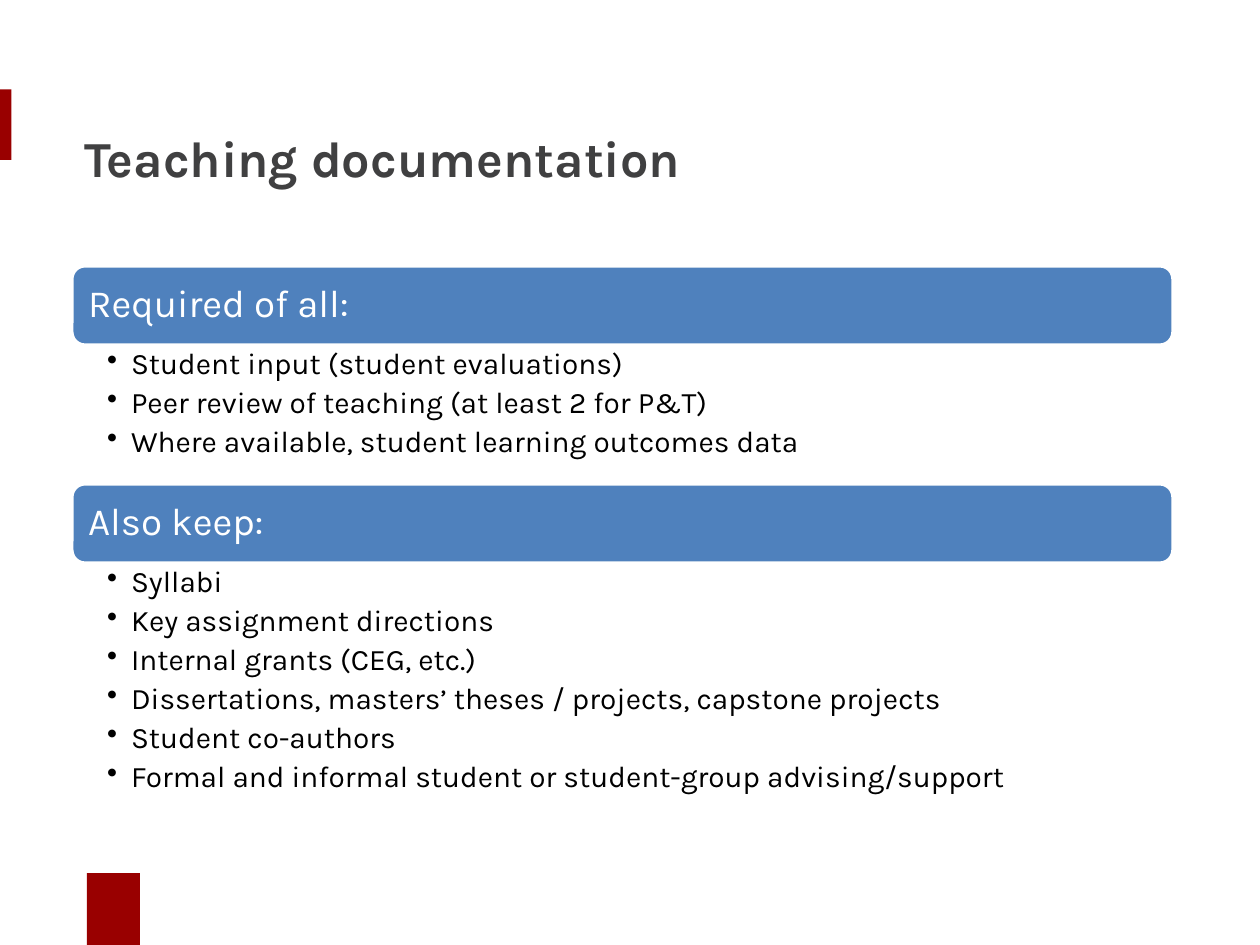
from lxml import etree
from pptx import Presentation
from pptx.dml.color import RGBColor
from pptx.enum.shapes import MSO_SHAPE
from pptx.enum.text import MSO_ANCHOR, PP_ALIGN
from pptx.oxml.ns import qn
from pptx.util import Inches, Pt

RECTANGLE = MSO_SHAPE.RECTANGLE
ROUNDED = MSO_SHAPE.ROUNDED_RECTANGLE
TOP, MIDDLE = MSO_ANCHOR.TOP, MSO_ANCHOR.MIDDLE
LEFT_ALIGNED = PP_ALIGN.LEFT

FONT = "Karla"
RED = RGBColor(0x99, 0x00, 0x00)
BLUE = RGBColor(0x4F, 0x81, 0xBD)
GRAY = RGBColor(0x40, 0x40, 0x41)
WHITE = RGBColor(0xFF, 0xFF, 0xFF)
BLACK = RGBColor(0x00, 0x00, 0x00)

SLIDE_WIDTH, SLIDE_HEIGHT = 10, 7.5
LEFT, CONTENT_WIDTH = 0.57, 8.74
CONTENT_TOP, BAR_HEIGHT = 2.11, 0.63
BULLET_INDENT = 0.19

SECTIONS = [
    ("Required of all:", 1.1, [
        "Student input (student evaluations)",
        "Peer review of teaching (at least 2 for P&T)",
        "Where available, student learning outcomes data",
    ]),
    ("Also keep:", 2.19, [
        "Syllabi",
        "Key assignment directions",
        "Internal grants (CEG, etc.)",
        "Dissertations, masters’ theses / projects, capstone projects",
        "Student co-authors",
        "Formal and informal student or student-group advising/support",
    ]),
]


def add_bullet(paragraph):
    """Give a paragraph a hanging round bullet."""
    properties = paragraph._p.get_or_add_pPr()
    properties.set("marL", str(Inches(BULLET_INDENT)))
    properties.set("indent", str(-Inches(BULLET_INDENT)))
    etree.SubElement(properties, qn("a:buChar")).set("char", "•")


def write_text(shape, lines, size, color, bold=False, anchor=MIDDLE,
               insets=(0.1, 0.05, 0.1, 0.05), spacing=None, after=0, bullets=False):
    """Write lines into a shape, one paragraph each, in a single format."""
    frame = shape.text_frame
    frame.word_wrap = True
    frame.vertical_anchor = anchor
    (frame.margin_left, frame.margin_top,
     frame.margin_right, frame.margin_bottom) = map(Inches, insets)
    frame.text = "\n".join(lines)
    for paragraph in frame.paragraphs:
        paragraph.alignment = LEFT_ALIGNED
        paragraph.line_spacing = spacing
        paragraph.space_after = Pt(after)
        font = paragraph.font if not paragraph.runs else paragraph.runs[0].font
        font.name, font.size, font.bold = FONT, Pt(size), bold
        font.color.rgb = color
        if bullets:
            add_bullet(paragraph)


def add_block(slide, kind, box, fill, line=None):
    """Add a filled preset shape, with a white outline if a width is given."""
    shape = slide.shapes.add_shape(kind, *map(Inches, box))
    shape.shadow.inherit = False
    shape.fill.solid()
    shape.fill.fore_color.rgb = fill
    if line:
        shape.line.color.rgb = WHITE
        shape.line.width = Pt(line)
    else:
        shape.line.fill.background()
    return shape


def add_text(slide, box, lines, **text_format):
    """Add a text box holding formatted lines."""
    write_text(slide.shapes.add_textbox(*map(Inches, box)), lines, **text_format)


def add_section(slide, top, heading, list_height, items):
    """Add a heading bar with its bulleted list and return the bottom edge."""
    bar = add_block(slide, ROUNDED, (LEFT, top, CONTENT_WIDTH, BAR_HEIGHT), BLUE, line=2)
    write_text(bar, [heading], size=22, color=WHITE, spacing=0.9)
    list_top = top + BAR_HEIGHT
    add_text(slide, (LEFT, list_top, CONTENT_WIDTH, list_height), items,
             size=17, color=BLACK, anchor=TOP, insets=(0.28, 0.03, 0.17, 0.03),
             spacing=0.9, after=3.9, bullets=True)
    return list_top + list_height


def main():
    """Build the slide and save it."""
    presentation = Presentation()
    presentation.slide_width = Inches(SLIDE_WIDTH)
    presentation.slide_height = Inches(SLIDE_HEIGHT)
    slide = presentation.slides.add_slide(presentation.slide_layouts[6])
    for box in ((0, 0.71, 0.09, 0.56), (0.69, 6.93, 0.42, 0.58)):
        add_block(slide, RECTANGLE, box, RED)
    add_text(slide, (LEFT, 0.68, 4.99, 1.14), ["Teaching documentation"],
             size=28.8, color=GRAY, bold=True)
    top = CONTENT_TOP
    for heading, list_height, items in SECTIONS:
        top = add_section(slide, top, heading, list_height, items)
    presentation.save("out.pptx")


if __name__ == "__main__":
    main()
